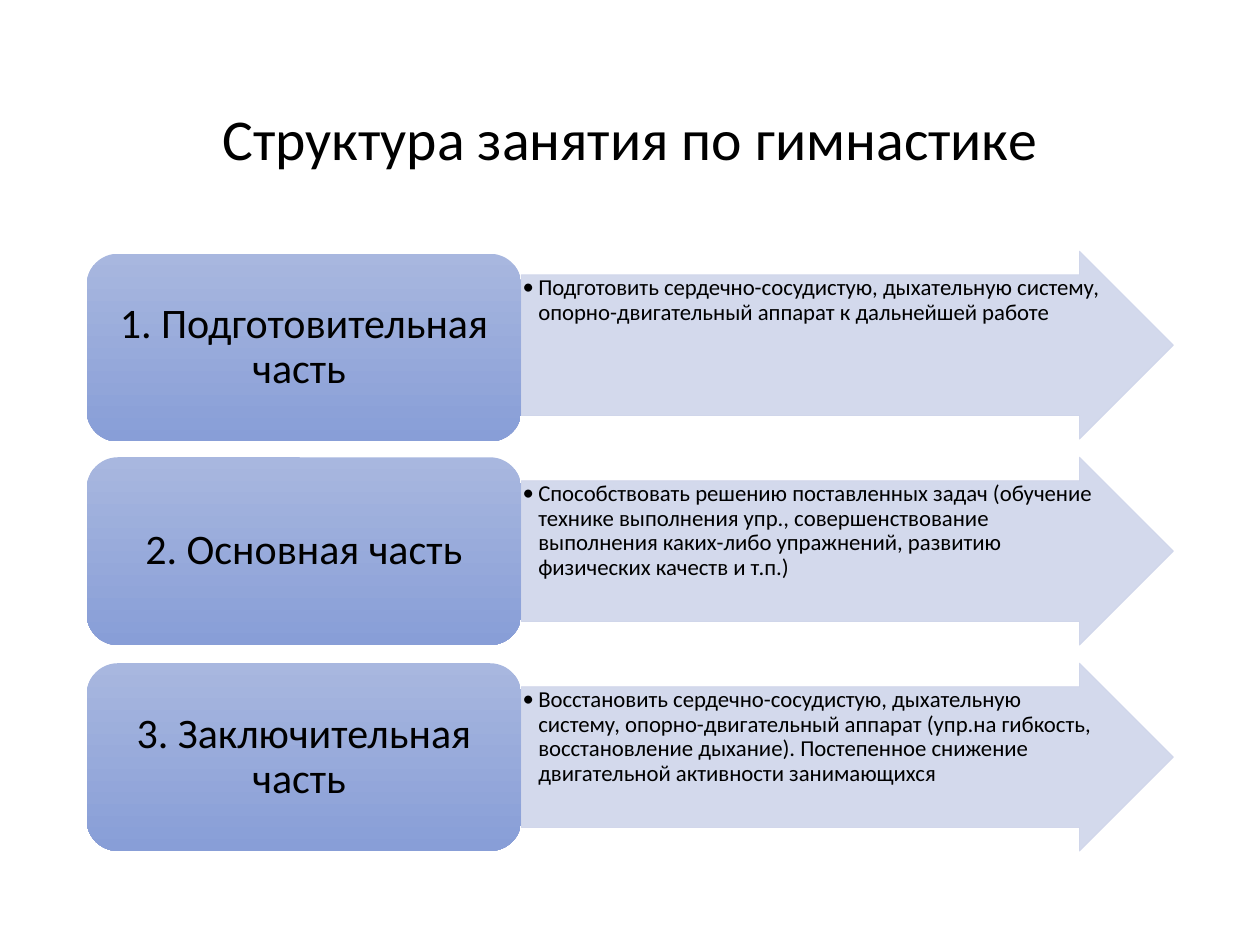
from dataclasses import dataclass

from lxml.etree import SubElement
from pptx import Presentation
from pptx.dml.color import RGBColor
from pptx.enum.shapes import MSO_SHAPE
from pptx.enum.text import MSO_ANCHOR, PP_ALIGN
from pptx.oxml.ns import qn
from pptx.shapes.autoshape import Shape
from pptx.slide import Slide
from pptx.text.text import TextFrame
from pptx.util import Pt

COLORS = {"text": "000000", "arrow": "CFD5EA", "top": "A8B7DF", "bottom": "889ED7"}
FONT = "Calibri"
LEFT, WIDTH = 49.5, 621
BOX_W, ROW_H = 248.4, 107.3
TOP, PITCH = 143.6, 117.7


@dataclass
class Stage:
    label: str
    goal: str
    drop: float = 0  # how far the box sits below its arrow


STAGES = [
    Stage("1. Подготовительная часть ",
          "Подготовить сердечно-сосудистую, дыхательную систему, "
          "опорно-двигательный аппарат к дальнейшей работе", 1.4),
    Stage("2. Основная часть",
          "Способствовать решению поставленных задач (обучение технике "
          "выполнения упр., совершенствование выполнения каких-либо "
          "упражнений, развитию физических качеств и т.п.)"),
    Stage("3. Заключительная часть ",
          "Восстановить сердечно-сосудистую, дыхательную систему, "
          "опорно-двигательный аппарат (упр.на гибкость, восстановление "
          "дыхание). Постепенное снижение двигательной активности "
          "занимающихся"),
]


def color(name: str) -> RGBColor:
    return RGBColor.from_string(COLORS[name])


def write(frame: TextFrame, text: str, size: float, align: PP_ALIGN,
          anchor: MSO_ANCHOR) -> None:
    frame.word_wrap = True
    frame.vertical_anchor = anchor
    para = frame.paragraphs[0]
    para.alignment = align
    para.line_spacing = 0.9
    run = para.add_run()
    run.text = text
    run.font.name = FONT
    run.font.size = Pt(size)
    run.font.color.rgb = color("text")


def add_bullet(frame: TextFrame, indent: float) -> None:
    props = frame.paragraphs[0]._p.get_or_add_pPr()
    props.set("marL", str(Pt(indent)))
    props.set("indent", str(-Pt(indent)))
    SubElement(props, qn("a:buFont")).set("typeface", FONT)
    SubElement(props, qn("a:buChar")).set("char", "•")


def fade(shape: Shape, percent: int) -> None:
    """Set the opacity of the fill and the line."""
    for tone in shape._element.spPr.iter(qn("a:srgbClr")):
        SubElement(tone, qn("a:alpha")).set("val", str(percent * 1000))


def draw_arrow(slide: Slide, top: float, goal: str) -> None:
    arrow = slide.shapes.add_shape(
        MSO_SHAPE.RIGHT_ARROW, Pt(LEFT + BOX_W), Pt(top),
        Pt(WIDTH - BOX_W), Pt(ROW_H))
    arrow.adjustments[0] = 0.75
    arrow.adjustments[1] = 0.5
    arrow.shadow.inherit = False
    arrow.fill.solid()
    arrow.fill.fore_color.rgb = color("arrow")
    arrow.line.color.rgb = color("arrow")
    arrow.line.width = Pt(0.5)
    fade(arrow, 90)
    frame = arrow.text_frame
    frame.margin_left = frame.margin_right = Pt(0.7)
    frame.margin_top = frame.margin_bottom = Pt(0.7)
    write(frame, goal, 13, PP_ALIGN.LEFT, MSO_ANCHOR.TOP)
    add_bullet(frame, 9)


def draw_box(slide: Slide, top: float, label: str) -> None:
    box = slide.shapes.add_shape(
        MSO_SHAPE.ROUNDED_RECTANGLE, Pt(LEFT), Pt(top), Pt(BOX_W), Pt(ROW_H))
    box.shadow.inherit = False
    box.fill.gradient()
    box.fill.gradient_angle = 270
    for stop, name in zip(box.fill.gradient_stops, ("top", "bottom")):
        stop.color.rgb = color(name)
    box.line.fill.background()
    write(box.text_frame, label, 24, PP_ALIGN.CENTER, MSO_ANCHOR.MIDDLE)


def main() -> None:
    deck = Presentation()
    deck.slide_width, deck.slide_height = Pt(720), Pt(540)
    slide = deck.slides.add_slide(deck.slide_layouts[6])
    title = slide.shapes.add_textbox(Pt(LEFT), Pt(28.8), Pt(WIDTH), Pt(104.4))
    write(title.text_frame, "Структура занятия по гимнастике", 33,
          PP_ALIGN.CENTER, MSO_ANCHOR.MIDDLE)
    for i, stage in enumerate(STAGES):
        top = TOP + i * PITCH
        draw_arrow(slide, top, stage.goal)
        draw_box(slide, top + stage.drop, stage.label)
    deck.save("out.pptx")


if __name__ == "__main__":
    main()
